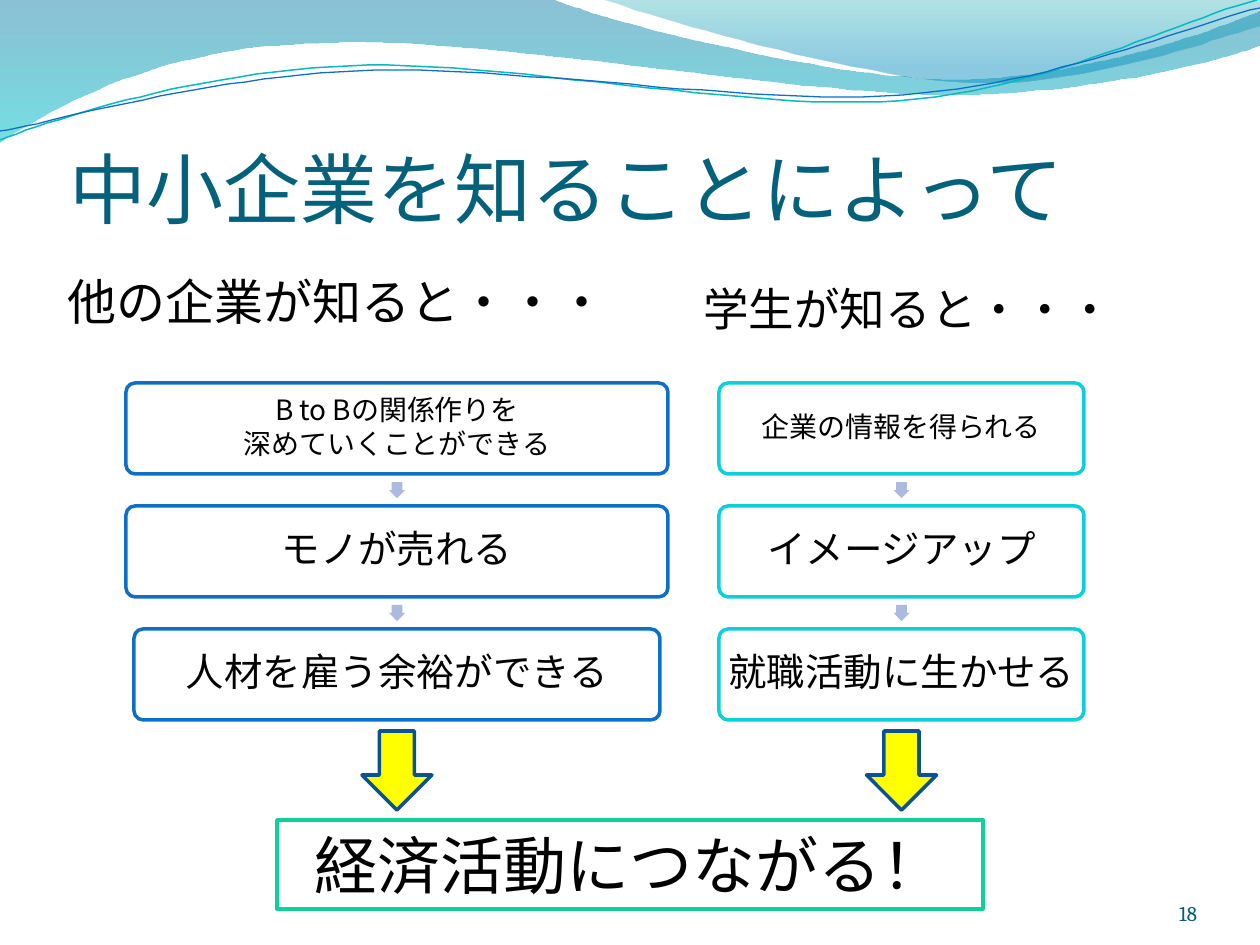
from lxml import etree
from pptx import Presentation
from pptx.dml.color import RGBColor
from pptx.enum.shapes import MSO_SHAPE
from pptx.enum.text import MSO_ANCHOR, PP_ALIGN
from pptx.oxml.ns import qn
from pptx.util import Pt

PX = 914400 / 126
WIDE, HIGH = 1260, 945
CENTER, RIGHT = PP_ALIGN.CENTER, PP_ALIGN.RIGHT
TOP, MIDDLE, BOTTOM = MSO_ANCHOR.TOP, MSO_ANCHOR.MIDDLE, MSO_ANCHOR.BOTTOM
RECT, ROUND, DOWN = MSO_SHAPE.RECTANGLE, MSO_SHAPE.ROUNDED_RECTANGLE, MSO_SHAPE.DOWN_ARROW
SANS, SERIF = "Noto Sans CJK JP", "Cambria"
HEX = {
    "white": "FFFFFF", "black": "000000", "title": "04617B", "number": "045D75",
    "blue": "0F6FC6", "cyan": "0BD0D9", "teal": "0AB8BF", "green": "10CF9B",
    "yellow": "FFFF00", "navy": "0B5292", "pale": "ABBBDF",
    "sea": "0074A1", "aqua": "00C6CF", "mint": "00A1A9", "sky": "008BBF",
}

# Each path is a start point, then line ends (one point) or cubic curves (three).
BAND = [(0, 0), [(554, 0)],
        [(600, 21), (837, 79), (955, 79)], [(1075, 79), (1207, 33), (1260, 11)],
        [(1260, 45)],
        [(1239, 55), (1096, 96), (940, 94)], [(784, 94), (481, 35), (324, 43)],
        [(163, 45), (58, 105), (0, 142)]]
CREST = [(604, 0), [(641, 14), (859, 78), (969, 82)],
         [(1079, 87), (1211, 40), (1260, 26)], [(1260, 0)]]
LOW = [(0, 140), [(60, 117), (199, 72), (349, 66)],
       [(498, 59), (747, 112), (898, 101)], [(1050, 89), (1182, 19), (1257, 0)]]
UPPER = [(0, 131), [(59, 121), (207, 77), (357, 71)],
         [(508, 64), (752, 106), (903, 95)], [(1053, 84), (1186, 26), (1260, 8)]]


def rgb(name):
    return RGBColor.from_string(HEX[name])


def emu(*nums):
    return [round(n * PX) for n in nums]


def place(shape, box):
    shape.left, shape.top, shape.width, shape.height = emu(*box)


def trace(start, parts, steps=24):
    """Return the points along a path of lines and cubic curves."""
    pts = [start]
    for part in parts:
        if len(part) == 1:
            pts += part
            continue
        knots = [pts[-1], *part]
        for i in range(1, steps + 1):
            t = i / steps
            mix = ((1 - t) ** 3, 3 * t * (1 - t) ** 2, 3 * t * t * (1 - t), t ** 3)
            pts.append(tuple(sum(m * k[axis] for m, k in zip(mix, knots)) for axis in (0, 1)))
    return pts


def draw(slide, curve, close):
    pts = trace(curve[0], curve[1:])
    form = slide.shapes.build_freeform(*pts[0], scale=PX)
    form.add_line_segments(pts[1:], close=close)
    shape = form.convert_to_shape()
    shape.shadow.inherit = False
    return shape


def add_wave(slide, curve, stops):
    """Fill a closed path with see-through (place, colour, alpha) stops, top to bottom."""
    shape = draw(slide, curve, True)
    shape.line.fill.background()
    shape.fill.gradient()
    shape.fill.gradient_angle = 270
    for stop, (pos, name, alpha) in zip(shape.fill.gradient_stops, stops):
        stop.position = pos
        stop.color.rgb = rgb(name)
    marks = shape.fill._xPr.iter(qn("a:srgbClr"))
    for mark, (pos, name, alpha) in zip(marks, stops):
        etree.SubElement(mark, qn("a:alpha")).set("val", str(alpha * 1000))


def add_ripple(slide, curve, name, width):
    shape = draw(slide, curve, False)
    shape.fill.background()
    shape.line.color.rgb = rgb(name)
    shape.line.width = Pt(width)


def add_waves(slide):
    add_wave(slide, BAND, [(0, "sea", 45), (1, "aqua", 55)])
    add_wave(slide, CREST, [(0, "mint", 30), (0.8, "sky", 45)])
    add_ripple(slide, LOW, "teal", 0.85)
    add_ripple(slide, UPPER, "blue", 0.75)


def write(shape, text, size, color="black", face=SANS, align=CENTER, anchor=MIDDLE, pad=(0, 0)):
    """Set the text; pad is the side and the top and bottom inset."""
    frame = shape.text_frame
    frame.text = text
    frame.word_wrap = True
    frame.vertical_anchor = anchor
    side, edge = emu(*pad)
    frame.margin_left = frame.margin_right = side
    frame.margin_top = frame.margin_bottom = edge
    for para in frame.paragraphs:
        para.alignment = align
        para.font.size = Pt(size)
        para.font.bold = False
        para.font.color.rgb = rgb(color)
        para.font.name = face
        etree.SubElement(para.font._rPr, qn("a:ea")).set("typeface", SANS)
    return frame.paragraphs


def add_block(slide, kind, box, fill, line=None):
    shape = slide.shapes.add_shape(kind, *emu(*box))
    shape.shadow.inherit = False
    shape.fill.solid()
    shape.fill.fore_color.rgb = rgb(fill)
    if line:
        shape.line.color.rgb = rgb(line)
        shape.line.width = Pt(2)
    else:
        shape.line.fill.background()
    return shape


def add_head(holder, box, text, size):
    """Fill a body placeholder with one unbulleted heading."""
    place(holder, box)
    para = write(holder, text, size, anchor=TOP, pad=(13, 6))[0]
    para.space_before = Pt(round(size * 0.2))
    props = para._p.get_or_add_pPr()
    props.set("marL", str(emu(38)[0]))
    props.set("indent", str(emu(-38)[0]))
    props.insert_element_before(etree.Element(qn("a:buNone")), "a:tabLst", "a:defRPr", "a:extLst")


def add_chain(slide, box, color, steps):
    """Stack (text, size, inset) steps with small arrows between and a big one below."""
    left, top, width, height = box
    mid = left + width / 2
    tall, tip = 91, 16
    gap = (height - len(steps) * tall) / (len(steps) - 1)
    for i, (text, size, inset) in enumerate(steps):
        y = top + i * (tall + gap)
        if i:
            arrow = add_block(slide, DOWN, (mid - tip / 2, y - (gap + tip) / 2, tip, tip), "pale")
            arrow.adjustments[0] = 0.67
        step = add_block(slide, ROUND, (left + inset, y, width - 2 * inset, tall), "white", color)
        step.adjustments[0] = 0.1
        for para in write(step, text, size, pad=(5, 5)):
            para.line_spacing = 0.9
            para.space_after = Pt(2)
    add_block(slide, DOWN, (mid - 35, top + height + 11, 70, 79), "yellow", "navy")


def main():
    deck = Presentation()
    deck.slide_width, deck.slide_height = emu(WIDE, HIGH)
    slide = deck.slides.add_slide(deck.slide_layouts[3])
    add_waves(slide)

    title, one, two = slide.placeholders
    place(title, (0, 97, 1134, 137))
    write(title, "中小企業を知ることによって", 44, "title", anchor=BOTTOM, pad=(0, 0))
    add_head(one, (44, 265, 586, 595), "他の企業が知ると・・・", 28)
    add_head(two, (630, 275, 557, 367), "学生が知ると・・・", 26)

    add_chain(slide, (126, 383, 542, 337), "blue", [
        ("B to Bの関係作りを\n深めていくことができる", 16, 0),
        ("モノが売れる", 22, 0),
        ("人材を雇う余裕ができる", 22, 8),
    ])
    add_chain(slide, (719, 383, 365, 337), "cyan", [
        ("企業の情報を得られる", 16, 0),
        ("イメージアップ", 22, 0),
        ("就職活動に生かせる", 22, 0),
    ])

    goal = add_block(slide, RECT, (277, 820, 706, 89), "white", "green")
    write(goal, "経済活動につながる！", 36, face=SERIF, pad=(13, 0))
    number = slide.shapes.add_textbox(*emu(1092, 876, 105, 50))
    write(number, "18", 12, "number", SERIF, RIGHT, BOTTOM)
    deck.save("out.pptx")


if __name__ == "__main__":
    main()
